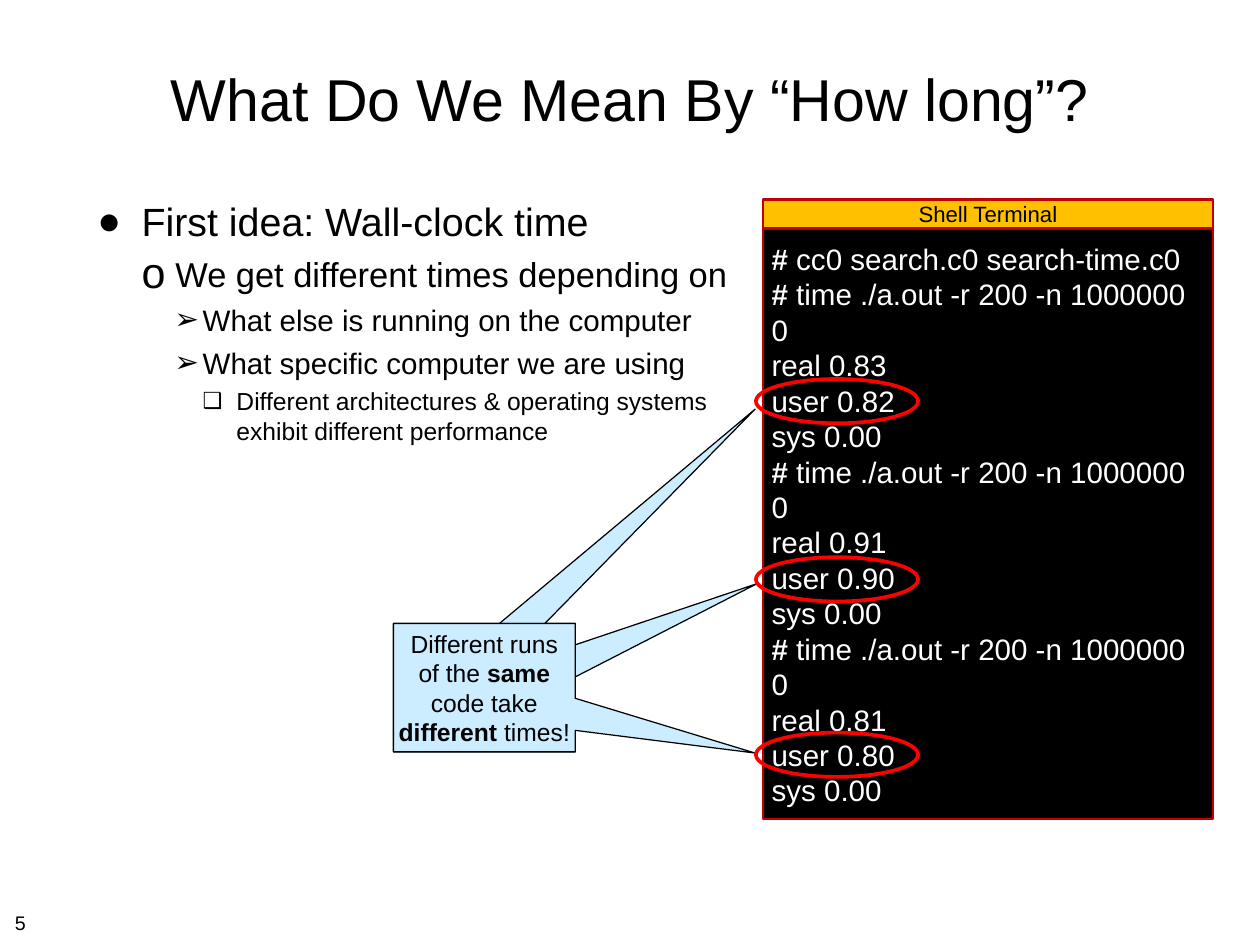
from dataclasses import dataclass

from lxml.etree import SubElement
from pptx import Presentation
from pptx.dml.color import RGBColor
from pptx.enum.shapes import MSO_SHAPE
from pptx.enum.text import MSO_ANCHOR, MSO_AUTO_SIZE, PP_ALIGN
from pptx.oxml.ns import qn
from pptx.util import Cm, Pt

FONT = "Arial"
BLACK, WHITE = "000000", "FFFFFF"
RED, DARK_RED = "FF0000", "C00000"
AMBER, PALE_BLUE = "FFC000", "CCECFF"


@dataclass(frozen=True)
class Box:
    left: float
    top: float
    width: float
    height: float

    def lengths(self) -> tuple:
        return Cm(self.left), Cm(self.top), Cm(self.width), Cm(self.height)


@dataclass(frozen=True)
class Point:
    text: str
    level: int
    size: float
    before: float
    margin: float
    hanging: float
    mark: str
    mark_percent: int = 100


@dataclass(frozen=True)
class TimedRun:
    real: str
    user: str
    ellipse_top: float
    tip: tuple[float, float]


POINTS = [
    Point("First idea: Wall-clock time", 0, 32, 8, 1.27, 1.27, "●"),
    Point("We get different times depending on", 1, 28, 7, 2.24, 0.97, "o", 125),
    Point("What else is running on the computer", 2, 24, 6, 3.02, 0.81, "➢"),
    Point("What specific computer we are using", 2, 24, 6, 3.02, 0.81, "➢"),
    Point("Different architectures & operating systems exhibit different performance",
          3, 20, 4.8, 3.99, 0.97, "❑", 90),
]
TIMED_RUNS = [
    TimedRun("0.83", "0.82", 10.87, (1.49, -2.17)),
    TimedRun("0.91", "0.90", 15.98, (1.5, -0.81)),
    TimedRun("0.81", "0.80", 21.01, (1.49, 0.51)),
]
CALLOUT_TEXT = "Different runs\nof the **same**\ncode take\n**different** times!"
CALLOUT = Box(11.28, 17.88, 5.21, 3.68)


def rgb(color: str) -> RGBColor:
    return RGBColor.from_string(color)


def set_frame(shape, inset: float = 0.15, anchor=MSO_ANCHOR.MIDDLE, wrap: bool = True):
    frame = shape.text_frame
    frame.auto_size = MSO_AUTO_SIZE.NONE
    frame.word_wrap = wrap
    frame.vertical_anchor = anchor
    frame.margin_left = frame.margin_right = Cm(inset)
    frame.margin_top = frame.margin_bottom = Cm(inset)
    return frame


def write(frame, text: str, *, size: float, color: str = BLACK,
          align=PP_ALIGN.LEFT, before: float = 0):
    first = frame.paragraphs[0]
    paragraph = frame.add_paragraph() if first.runs else first
    paragraph.alignment = align
    paragraph.space_before = Pt(before)
    for index, part in enumerate(text.split("**")):
        for number, line in enumerate(part.split("\n")):
            if number:
                paragraph.add_line_break()
            if line:
                run = paragraph.add_run()
                run.text = line
                run.font.name = FONT
                run.font.size = Pt(size)
                run.font.bold = index % 2 == 1
                run.font.color.rgb = rgb(color)
    return paragraph


def add_bullet(paragraph, point: Point) -> None:
    paragraph.level = point.level
    properties = paragraph._p.get_or_add_pPr()
    properties.set("marL", str(Cm(point.margin)))
    properties.set("indent", str(-Cm(point.hanging)))
    SubElement(properties, qn("a:buSzPct"), val=str(point.mark_percent * 1000))
    SubElement(properties, qn("a:buFont"), typeface=FONT)
    SubElement(properties, qn("a:buChar"), char=point.mark)


def draw(slide, preset, box: Box, line: str, width: float, fill: str | None = None):
    shape = slide.shapes.add_shape(preset, *box.lengths())
    shape.shadow.inherit = False
    shape.line.color.rgb = rgb(line)
    shape.line.width = Pt(width)
    if fill:
        shape.fill.solid()
        shape.fill.fore_color.rgb = rgb(fill)
    else:
        shape.fill.background()
    return shape


def add_title(slide) -> None:
    title = slide.shapes.title
    title.left, title.top, title.width, title.height = Box(2.64, 0.71, 30.84, 4.17).lengths()
    write(set_frame(title), "What Do We Mean By “How long”?", size=48, align=PP_ALIGN.CENTER)


def add_points(slide) -> None:
    body = slide.shapes.add_textbox(*Box(2.64, 5.51, 19.23, 19.15).lengths())
    frame = set_frame(body, anchor=MSO_ANCHOR.TOP)
    for point in POINTS:
        add_bullet(write(frame, point.text, size=point.size, before=point.before), point)


def add_terminal(slide) -> None:
    screen = draw(slide, MSO_SHAPE.RECTANGLE, Box(21.87, 6.58, 12.9, 16.92), DARK_RED, 1.5, BLACK)
    lines = ["**#** cc0 search.c0 search-time.c0"]
    for timed in TIMED_RUNS:
        lines += ["**#** time ./a.out -r 200 -n 1000000", "0",
                  f"real {timed.real}", f"user {timed.user}", "sys 0.00"]
    frame = set_frame(screen, inset=0.25)
    for line in lines:
        write(frame, line, size=24, color=WHITE)
    header = draw(slide, MSO_SHAPE.RECTANGLE, Box(21.87, 5.72, 12.9, 0.84), DARK_RED, 2, AMBER)
    write(set_frame(header, wrap=False), "Shell Terminal", size=18, align=PP_ALIGN.CENTER)


def add_callouts(slide) -> None:
    for timed in TIMED_RUNS:
        callout = draw(slide, MSO_SHAPE.RECTANGULAR_CALLOUT, CALLOUT, BLACK, 1, PALE_BLUE)
        callout.adjustments[0], callout.adjustments[1] = timed.tip
        draw(slide, MSO_SHAPE.OVAL, Box(21.67, timed.ellipse_top, 4.65, 1.27), RED, 3)
    frame = set_frame(callout, inset=0.13, wrap=False)
    write(frame, CALLOUT_TEXT, size=20, align=PP_ALIGN.CENTER)


def add_page_number(slide) -> None:
    number = slide.shapes.add_textbox(*Box(0.28, 25.98, 0.94, 0.89).lengths())
    write(set_frame(number, anchor=MSO_ANCHOR.TOP, wrap=False), "5", size=16)


def main() -> None:
    deck = Presentation()
    deck.slide_width, deck.slide_height = Cm(36.12), Cm(27.1)
    slide = deck.slides.add_slide(deck.slide_layouts[5])
    add_title(slide)
    add_points(slide)
    add_terminal(slide)
    add_callouts(slide)
    add_page_number(slide)
    deck.save("out.pptx")


if __name__ == "__main__":
    main()
